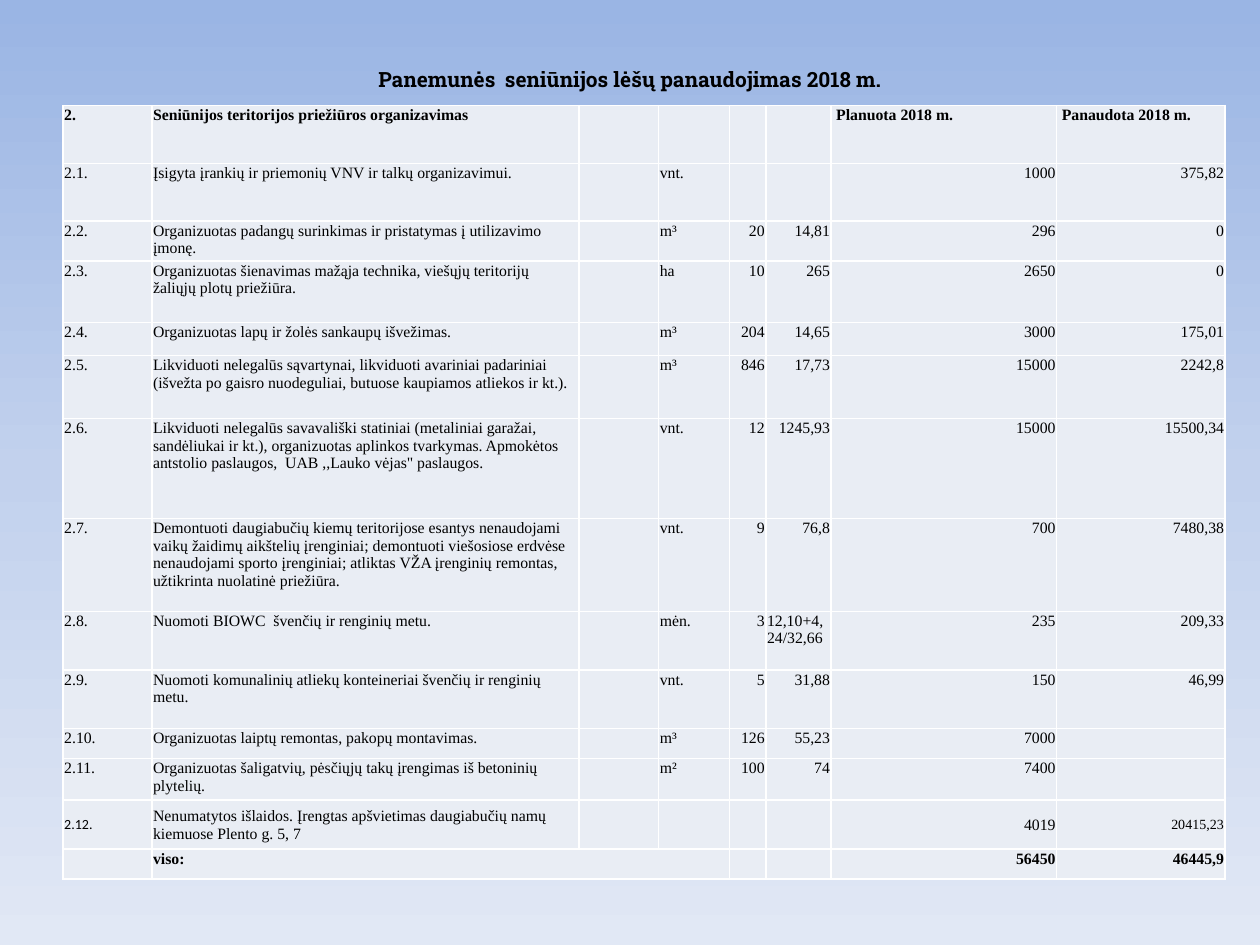
from copy import deepcopy
from dataclasses import dataclass

from lxml import etree
from pptx import Presentation
from pptx.dml.color import RGBColor
from pptx.enum.text import MSO_ANCHOR, PP_ALIGN
from pptx.oxml.ns import qn
from pptx.util import Pt

LEFT, RIGHT, CENTER = PP_ALIGN.LEFT, PP_ALIGN.RIGHT, PP_ALIGN.CENTER
TOP, MIDDLE = MSO_ANCHOR.TOP, MSO_ANCHOR.MIDDLE


@dataclass(frozen=True)
class Theme:
    background: tuple = ((0, "9AB5E4"), (0.5, "C2D1ED"), (1, "E1E8F5"))
    cell_fill: str = "E9EDF4"
    border: str = "FFFFFF"
    text: str = "000000"
    title_font: str = "Roboto Slab"
    body_font: str = "Times New Roman"
    number_font: str = "Calibri"
    title_size: float = 12
    title_gap_size: float = 22
    body_size: float = 9
    small_size: float = 8


THEME = Theme()

TABLE_LEFT, TABLE_TOP = 36, 60.3
COLUMN_WIDTHS = (50.8, 244.2, 45.4, 40.4, 20.9, 37.3, 128.9, 96.3)
FIRST_NUMERIC_COLUMN = 4

# Number, description, spare column, unit, quantity, price, planned, used
CLEANING_ROWS = (
    ("2.", "Seniūnijos teritorijos priežiūros organizavimas", "", "", "", "",
     " Planuota 2018 m.", " Panaudota 2018 m."),
    ("2.1.", "Įsigyta įrankių ir priemonių VNV ir talkų organizavimui.",
     "", "vnt.", "", "", "1000", "375,82"),
    ("2.2.", "Organizuotas padangų surinkimas ir pristatymas į utilizavimo įmonę.",
     "", "m³", "20", "14,81", "296", "0"),
    ("2.3.", "Organizuotas šienavimas mažąja technika, viešųjų teritorijų  "
     "žaliųjų plotų priežiūra.", "", "ha", "10", "265", "2650", "0"),
    ("2.4.", "Organizuotas lapų ir žolės sankaupų išvežimas.",
     "", "m³", "204", "14,65", "3000", "175,01"),
    ("2.5.", "Likviduoti nelegalūs sąvartynai, likviduoti avariniai padariniai "
     "(išvežta po gaisro nuodeguliai, butuose kaupiamos atliekos ir kt.).",
     "", "m³", "846", "17,73", "15000", "2242,8"),
    ("2.6.", "Likviduoti nelegalūs savavališki statiniai (metaliniai garažai, "
     "sandėliukai ir kt.), organizuotas aplinkos tvarkymas. Apmokėtos "
     "antstolio paslaugos,  UAB ,,Lauko vėjas\" paslaugos.",
     "", "vnt.", "12", "1245,93", "15000", "15500,34"),
)
CLEANING_HEIGHTS = (33, 33, 23, 35, 19, 36, 57)

EQUIPMENT_ROWS = (
    ("2.7.", "Demontuoti daugiabučių kiemų teritorijose esantys nenaudojami "
     "vaikų žaidimų aikštelių įrenginiai; demontuoti viešosiose erdvėse  "
     "nenaudojami sporto įrenginiai; atliktas VŽA įrenginių remontas, "
     "užtikrinta nuolatinė priežiūra.",
     "", "vnt.", "9", "76,8", "700", "7480,38"),
    ("2.8.", "Nuomoti BIOWC  švenčių ir renginių metu.",
     "", "mėn.", "3", "12,10+4,24/32,66", "235", "209,33"),
    ("2.9.", "Nuomoti komunalinių atliekų konteineriai švenčių ir renginių metu.",
     "", "vnt.", "5", "31,88", "150", "46,99"),
    ("2.10.", "Organizuotas laiptų remontas, pakopų montavimas.",
     "", "m³", "126", "55,23", "7000", ""),
    ("2.11.", "Organizuotas šaligatvių, pėsčiųjų takų įrengimas iš betoninių "
     "plytelių.", "", "m²", "100", "74", "7400", ""),
    ("2.12.", "Nenumatytos išlaidos. Įrengtas apšvietimas daugiabučių namų "
     "kiemuose Plento g. 5, 7", "", "", "", "", "4019", "20415,23"),
    ("", "viso:", "", "", "", "", "56450", "46445,9"),
)
EQUIPMENT_HEIGHTS = (53, 33.5, 33.5, 17.3, 23.5, 28.2, 17.2)
UNFORESEEN_ROW, TOTAL_ROW = 5, 6


def style_font(font, name, size, bold=False):
    font.name, font.size, font.bold = name, Pt(size), bold
    font.color.rgb = RGBColor.from_string(THEME.text)


def paint_background(slide):
    fill = slide.background.fill
    fill.gradient()
    fill.gradient_angle = 270
    stop_list = next(slide.element.iter(qn("a:gsLst")))
    stop_list.append(deepcopy(stop_list[-1]))
    for stop, (position, color) in zip(fill.gradient_stops, THEME.background):
        stop.position = position
        stop.color.rgb = RGBColor.from_string(color)


def add_title(slide):
    shape = slide.shapes.add_textbox(Pt(36), Pt(21.6), Pt(648), Pt(38.9))
    frame = shape.text_frame
    frame.word_wrap = True
    frame.vertical_anchor = MIDDLE
    paragraph = frame.paragraphs[0]
    paragraph.alignment = CENTER
    for text, size in (("Panemunės", THEME.title_size),
                       (" ", THEME.title_gap_size),
                       ("seniūnijos lėšų panaudojimas 2018 m.", THEME.title_size)):
        run = paragraph.add_run()
        run.text = text
        style_font(run.font, THEME.title_font, size, bold=True)


def add_borders(cell):
    """Put the four edge lines ahead of the fill, as the schema orders them."""
    properties = cell._tc.get_or_add_tcPr()
    for index, edge in enumerate(("lnL", "lnR", "lnT", "lnB")):
        line = etree.Element(qn(f"a:{edge}"), w=str(Pt(1)))
        solid = etree.SubElement(line, qn("a:solidFill"))
        etree.SubElement(solid, qn("a:srgbClr"), val=THEME.border)
        properties.insert(index, line)


def fill_cell(cell, text, alignment, bold):
    cell.margin_left = cell.margin_right = cell.margin_top = Pt(0.7)
    cell.margin_bottom = 0
    cell.vertical_anchor = TOP
    cell.fill.solid()
    cell.fill.fore_color.rgb = RGBColor.from_string(THEME.cell_fill)
    add_borders(cell)
    paragraph = cell.text_frame.paragraphs[0]
    paragraph.alignment = alignment
    if text:
        paragraph.text = text
        style_font(paragraph.runs[0].font, THEME.body_font, THEME.body_size, bold)
    else:
        # Keeps the default large type of an empty cell from stretching its row
        etree.SubElement(paragraph._p, qn("a:endParaRPr"),
                         sz=str(int(THEME.body_size * 100)))


def add_budget_table(slide, top, rows, heights, bold_row):
    frame = slide.shapes.add_table(
        len(rows), len(COLUMN_WIDTHS), Pt(TABLE_LEFT), Pt(top),
        Pt(sum(COLUMN_WIDTHS)), Pt(sum(heights)))
    table = frame.table
    table.first_row = table.horz_banding = False
    for column, width in zip(table.columns, COLUMN_WIDTHS):
        column.width = Pt(width)
    for row_index, (values, height) in enumerate(zip(rows, heights)):
        table.rows[row_index].height = Pt(height)
        for column_index, text in enumerate(values):
            numeric = (column_index >= FIRST_NUMERIC_COLUMN
                       and text.replace(",", "").isdigit())
            fill_cell(table.cell(row_index, column_index), text,
                      RIGHT if numeric else LEFT, row_index == bold_row)
    return table


def finish_equipment_table(table):
    """Merge the total label and set the unforeseen costs row apart."""
    table.cell(TOTAL_ROW, 1).merge(table.cell(TOTAL_ROW, 3))
    cells = table.rows[UNFORESEEN_ROW].cells
    for cell in cells:
        cell.vertical_anchor = MIDDLE
    for column, font_name in ((0, THEME.number_font), (7, THEME.body_font)):
        run = cells[column].text_frame.paragraphs[0].runs[0]
        style_font(run.font, font_name, THEME.small_size)


def main():
    presentation = Presentation()
    presentation.slide_width, presentation.slide_height = Pt(720), Pt(540)
    slide = presentation.slides.add_slide(presentation.slide_layouts[6])
    paint_background(slide)
    add_title(slide)
    add_budget_table(slide, TABLE_TOP, CLEANING_ROWS, CLEANING_HEIGHTS, bold_row=0)
    equipment = add_budget_table(slide, TABLE_TOP + sum(CLEANING_HEIGHTS),
                                 EQUIPMENT_ROWS, EQUIPMENT_HEIGHTS, TOTAL_ROW)
    finish_equipment_table(equipment)
    presentation.save("out.pptx")


if __name__ == "__main__":
    main()
